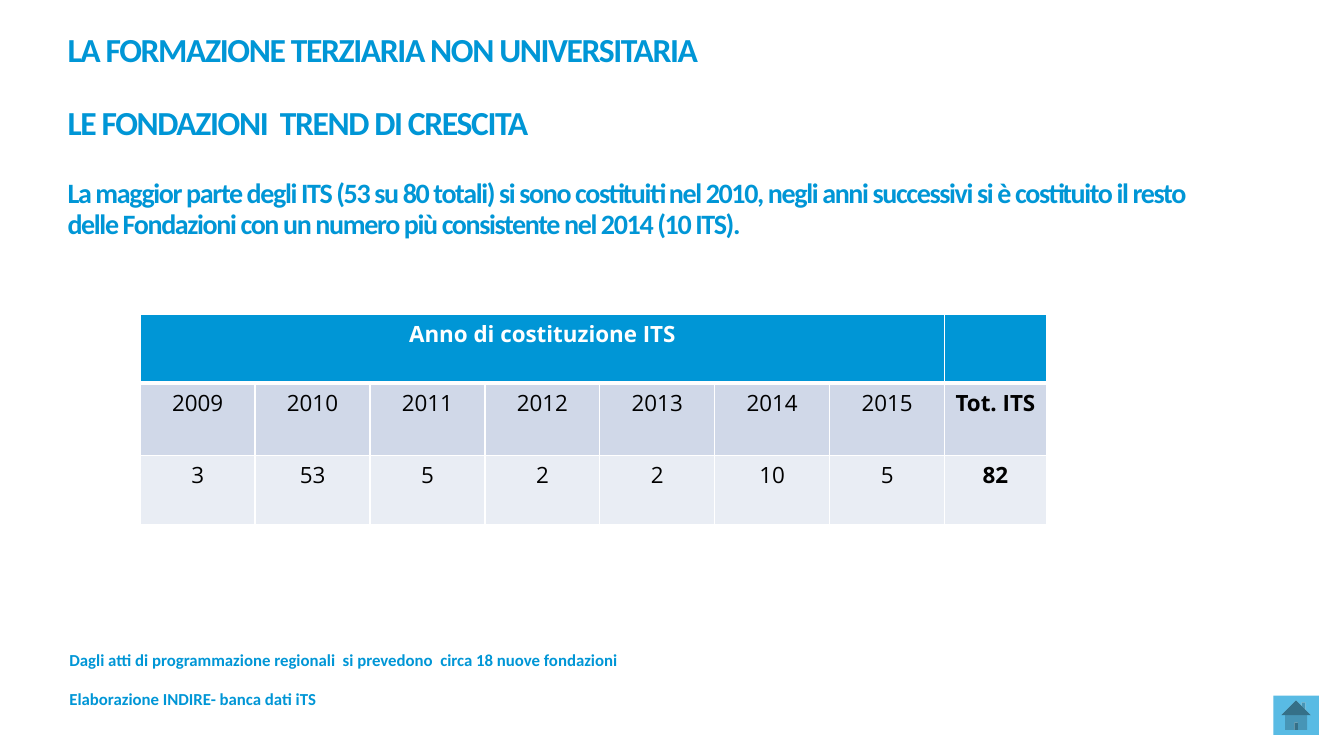
from dataclasses import dataclass

from lxml.etree import SubElement
from pptx import Presentation
from pptx.dml.color import RGBColor
from pptx.enum.shapes import MSO_SHAPE
from pptx.enum.text import MSO_ANCHOR, PP_ALIGN
from pptx.oxml.ns import qn
from pptx.slide import Slide
from pptx.table import _Cell
from pptx.text.text import _Paragraph
from pptx.util import Inches, Pt

BLUE = RGBColor(0x00, 0x96, 0xD6)
LIGHT_BLUE = RGBColor(0x59, 0xBB, 0xE4)
YEAR_FILL = RGBColor(0xD0, 0xD8, 0xE8)
COUNT_FILL = RGBColor(0xE9, 0xED, 0xF4)
WHITE = RGBColor(0xFF, 0xFF, 0xFF)
BLACK = RGBColor(0x00, 0x00, 0x00)


@dataclass(frozen=True)
class Line:
    text: str
    size: int
    before: float = 0


@dataclass(frozen=True)
class TextBlock:
    left: float
    top: float
    width: float
    height: float
    lines: tuple[Line, ...]
    inset: tuple[float, float] = (0.1, 0.05)
    anchor: MSO_ANCHOR = MSO_ANCHOR.MIDDLE
    line_spacing: float = 1.0
    tracking: int = 0


@dataclass(frozen=True)
class TableRow:
    values: tuple[str, ...]
    height: float
    fill: RGBColor
    color: RGBColor
    top_border: int
    bottom_border: int


TEXT_BLOCKS = (
    TextBlock(
        0.67, 0.33, 11.12, 2.55,
        (
            Line("LA FORMAZIONE TERZIARIA NON UNIVERSITARIA", 24),
            Line("LE FONDAZIONI  TREND DI CRESCITA", 24, 26.4),
            Line(
                "La maggior parte degli ITS (53 su 80 totali) si sono costituiti nel 2010, "
                "negli anni successivi si è costituito il resto delle Fondazioni con un "
                "numero più consistente nel 2014 (10 ITS).", 20, 26.4,
            ),
        ),
        inset=(0, 0), anchor=MSO_ANCHOR.TOP, line_spacing=0.9, tracking=-100,
    ),
    TextBlock(0.59, 6.35, 9, 0.39, (
        Line("Dagli atti di programmazione regionali  si prevedono  circa 18 nuove fondazioni", 12),
    )),
    TextBlock(0.59, 6.74, 9, 0.39, (Line("Elaborazione INDIRE- banca dati iTS", 12),)),
)

COLUMN_WIDTHS = (1.14,) * 7 + (1.01,)
TABLE_ROWS = (
    TableRow(("Anno di costituzione ITS",) + ("",) * 7, 0.68, BLUE, WHITE, 1, 3),
    TableRow(
        tuple(str(year) for year in range(2009, 2016)) + ("Tot. ITS",),
        0.72, YEAR_FILL, BLACK, 3, 1,
    ),
    TableRow(("3", "53", "5", "2", "2", "10", "5", "82"), 0.68, COUNT_FILL, BLACK, 1, 1),
)


def write(para: _Paragraph, text: str, color: RGBColor, font_format: dict, tracking: int = 0) -> None:
    span = para.add_run()
    span.text = text
    for name, value in font_format.items():
        setattr(span.font, name, value)
    span.font.color.rgb = color
    if tracking:
        span.font._element.set("spc", str(tracking))


def draw_text(page: Slide, block: TextBlock) -> None:
    box = page.shapes.add_textbox(
        Inches(block.left), Inches(block.top), Inches(block.width), Inches(block.height)
    )
    frame = box.text_frame
    across, down = (Inches(inset) for inset in block.inset)
    frame_format = {
        "word_wrap": True, "vertical_anchor": block.anchor,
        "margin_left": across, "margin_right": across,
        "margin_top": down, "margin_bottom": down,
    }
    for name, value in frame_format.items():
        setattr(frame, name, value)
    for index, line in enumerate(block.lines):
        para = frame.add_paragraph() if index else frame.paragraphs[0]
        para.line_spacing = block.line_spacing
        if line.before:
            para.space_before = Pt(line.before)
        font_format = {"name": "Calibri", "size": Pt(line.size), "bold": True}
        write(para, line.text, BLUE, font_format, block.tracking)


def set_borders(cell: _Cell, top: int, bottom: int) -> None:
    properties = cell._tc.get_or_add_tcPr()
    for side, width in {"L": 1, "R": 1, "T": top, "B": bottom}.items():
        border = SubElement(properties, qn(f"a:ln{side}"), w=str(Pt(width)))
        fill = SubElement(border, qn("a:solidFill"))
        SubElement(fill, qn("a:srgbClr"), val=str(WHITE))


def draw_cell(cell: _Cell, row: TableRow, text: str, bold: bool) -> None:
    set_borders(cell, row.top_border, row.bottom_border)
    cell.fill.solid()
    cell.fill.fore_color.rgb = row.fill
    cell_format = {
        "margin_left": Inches(0.07), "margin_right": Inches(0.07),
        "margin_top": 0, "margin_bottom": 0,
    }
    for name, value in cell_format.items():
        setattr(cell, name, value)
    if text:
        para = cell.text_frame.paragraphs[0]
        para.alignment = PP_ALIGN.CENTER
        para.line_spacing = 1.15
        write(para, text, row.color, {"name": "Open Sans", "size": Pt(16), "bold": bold})


def draw_table(page: Slide) -> None:
    frame = page.shapes.add_table(
        len(TABLE_ROWS), len(COLUMN_WIDTHS), Inches(1.39), Inches(3.12),
        Inches(sum(COLUMN_WIDTHS)), Inches(sum(row.height for row in TABLE_ROWS)),
    )
    table = frame.table
    table.horz_banding = False
    for column, width in zip(table.columns, COLUMN_WIDTHS):
        column.width = Inches(width)
    last_column = len(COLUMN_WIDTHS) - 1
    for row_index, row in enumerate(TABLE_ROWS):
        table.rows[row_index].height = Inches(row.height)
        for column_index, text in enumerate(row.values):
            bold = row_index == 0 or column_index == last_column
            draw_cell(table.cell(row_index, column_index), row, text, bold)
    table.cell(0, 0).merge(table.cell(0, last_column - 1))


def draw_home_button(page: Slide) -> None:
    button = page.shapes.add_shape(
        MSO_SHAPE.ACTION_BUTTON_HOME, Inches(12.63), Inches(6.9), Inches(0.45), Inches(0.39)
    )
    button.shadow.inherit = False
    button.fill.solid()
    button.fill.fore_color.rgb = LIGHT_BLUE
    button.line.fill.background()


def main() -> None:
    deck = Presentation()
    deck.slide_width = Inches(13.33)
    deck.slide_height = Inches(7.5)
    page = deck.slides.add_slide(deck.slide_layouts[6])
    draw_home_button(page)
    for block in TEXT_BLOCKS:
        draw_text(page, block)
    draw_table(page)
    deck.save("out.pptx")


if __name__ == "__main__":
    main()
